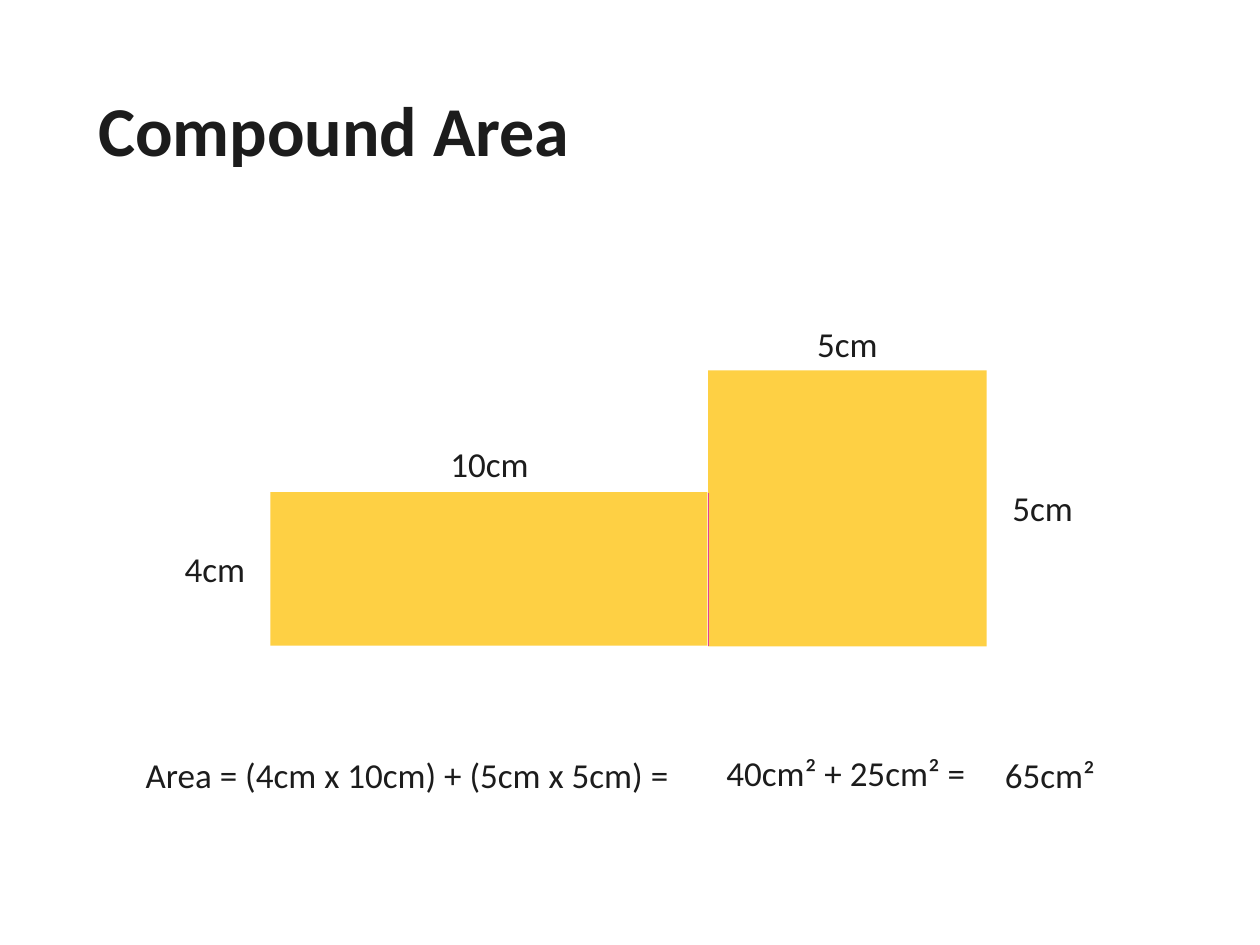
from dataclasses import dataclass

from lxml.etree import SubElement
from pptx import Presentation
from pptx.dml.color import RGBColor
from pptx.enum.shapes import MSO_CONNECTOR as Connector, MSO_SHAPE as Shape
from pptx.enum.text import MSO_ANCHOR as Anchor, MSO_AUTO_SIZE as AutoSize, PP_ALIGN as Align
from pptx.oxml.ns import qn
from pptx.util import Inches, Pt

COLORS = {"text": "1C1C1C", "area": "FED044", "divider": "E34192"}
TITLE_FORMAT = {"name": "Calibri", "size": Pt(40), "bold": True}
BODY_FORMAT = {"name": "Calibri", "size": Pt(20), "bold": False}
TITLE_INSET = Inches(0.28)
LABEL_SIZE = (0.89, 0.44)
STEP_HEIGHT = 0.57


@dataclass
class AreaPart:
    left: float
    top: float
    width: float
    height: float
    rotation: int = 0


@dataclass
class Label:
    text: str
    left: float
    top: float


@dataclass
class FormulaStep:
    text: str
    left: float
    top: float
    width: float


AREA_PARTS = [
    AreaPart(5.62, 2.94, 2.21, 2.19),
    AreaPart(3.27, 2.78, 1.22, 3.47, 90),
]
LABELS = [
    Label("10cm", 3.44, 3.46),
    Label("4cm", 1.26, 4.3),
    Label("5cm", 6.28, 2.51),
    Label("5cm", 7.83, 3.81),
]
FORMULA = [
    FormulaStep("Area = (4cm x 10cm) + (5cm x 5cm) =", 1.03, 5.86, 4.78),
    FormulaStep("40cm² + 25cm² =", 5.64, 5.85, 2.34),
    FormulaStep("65cm²", 7.85, 5.86, 1.06),
]


def color(name: str) -> RGBColor:
    return RGBColor.from_string(COLORS[name])


def write(frame, text: str, font_format: dict, align: Align) -> None:
    frame.text = text
    frame.word_wrap = True
    paragraph = frame.paragraphs[0]
    paragraph.alignment = align
    for name, value in font_format.items():
        setattr(paragraph.font, name, value)
    paragraph.font.color.rgb = color("text")


def add_title(slide, text: str) -> None:
    title = slide.shapes.title
    title.left, title.top = Inches(0.5), Inches(0.52)
    title.width, title.height = Inches(8.99), Inches(1.09)
    frame = title.text_frame
    write(frame, text, TITLE_FORMAT, Align.LEFT)
    frame.auto_size = AutoSize.NONE
    frame.vertical_anchor = Anchor.MIDDLE
    for side in ("left", "top", "right", "bottom"):
        setattr(frame, f"margin_{side}", TITLE_INSET)
    frame.paragraphs[0].line_spacing = 0.9


def add_area_part(slide, part: AreaPart) -> None:
    shape = slide.shapes.add_shape(Shape.RECTANGLE, Inches(part.left), Inches(part.top),
                                   Inches(part.width), Inches(part.height))
    shape.rotation = part.rotation
    shape.shadow.inherit = False
    shape.fill.solid()
    shape.fill.fore_color.rgb = color("area")
    shape.line.fill.background()


def add_label(slide, label: Label) -> None:
    box = slide.shapes.add_textbox(Inches(label.left), Inches(label.top), *map(Inches, LABEL_SIZE))
    write(box.text_frame, label.text, BODY_FORMAT, Align.CENTER)
    box.text_frame.auto_size = AutoSize.SHAPE_TO_FIT_TEXT


def add_formula_step(slide, step: FormulaStep) -> None:
    shape = slide.shapes.add_shape(Shape.ROUNDED_RECTANGLE, Inches(step.left), Inches(step.top),
                                   Inches(step.width), Inches(STEP_HEIGHT))
    shape.shadow.inherit = False
    shape.fill.background()
    shape.line.fill.background()
    write(shape.text_frame, step.text, BODY_FORMAT, Align.LEFT)
    shape.text_frame.vertical_anchor = Anchor.MIDDLE


def add_divider(slide, x: float, top: float, bottom: float) -> None:
    divider = slide.shapes.add_connector(Connector.STRAIGHT, Inches(x), Inches(top),
                                         Inches(x), Inches(bottom))
    divider.line.color.rgb = color("divider")
    divider.line.width = Pt(0.5)
    SubElement(divider._element.spPr, qn("a:effectLst"))


def main() -> None:
    presentation = Presentation()
    presentation.slide_width, presentation.slide_height = Inches(10), Inches(7.5)
    slide = presentation.slides.add_slide(presentation.slide_layouts[5])
    add_title(slide, "Compound Area")
    for part in AREA_PARTS:
        add_area_part(slide, part)
    for label in LABELS:
        add_label(slide, label)
    for step in FORMULA:
        add_formula_step(slide, step)
    add_divider(slide, 5.62, 3.91, 5.13)
    presentation.save("out.pptx")


if __name__ == "__main__":
    main()
